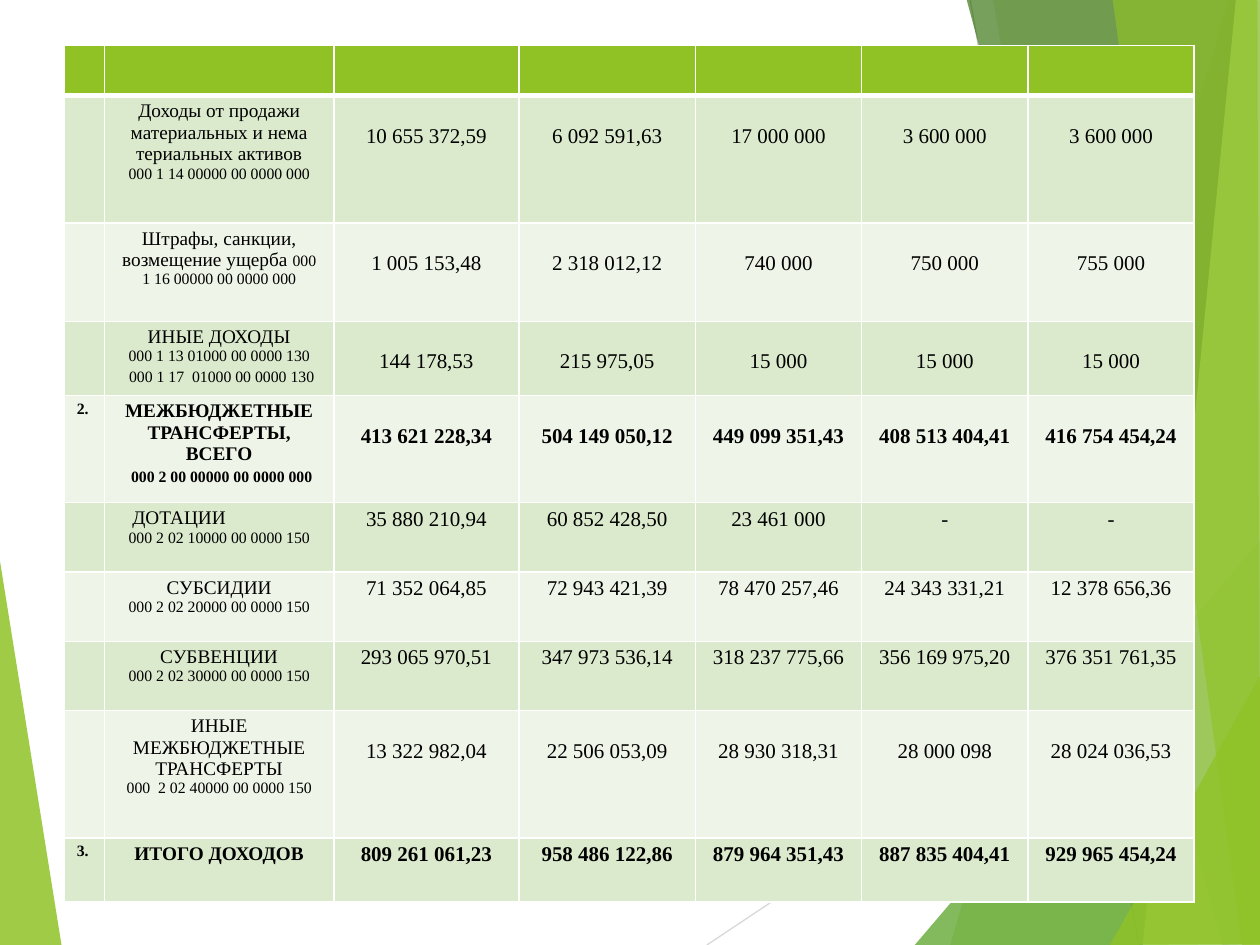
import dataclasses

import lxml.etree
import pptx
import pptx.dml.color
import pptx.enum.text
import pptx.oxml.ns
import pptx.util

Inches = pptx.util.Inches
Align = pptx.enum.text.PP_ALIGN
qn = pptx.oxml.ns.qn


@dataclasses.dataclass(frozen=True)
class Theme:
    font: str = "Times New Roman"
    ink: str = "000000"
    edge: str = "FFFFFF"
    head: str = "90C226"
    bands: tuple = ("DBE9CD", "EEF4E8")
    code: int = 9
    name: int = 11
    sum: int = 12
    thin: float = 1
    thick: float = 3
    pad: float = 0.04
    drop: float = 0.19


THEME = Theme()
CODE, NAME = THEME.code, THEME.name
LEFT, RIGHT = Align.LEFT, Align.CENTER

BACK = [
    ("90C226", 85, [(-0.01, 4.39), (0.49, 7.51), (-0.01, 7.5)]),
    ("D9D9D9", None, [(5.61, 7.5), (10.01, 4.57)]),
    ("BFBFBF", None, [(7.7, 0), (9.04, 7.5)]),
    ("90C226", 30, [(9.75, 0), (7.54, 7.5), (10.02, 7.51), (10.01, 0.01)]),
    ("90C226", 20, [(7.88, -0.01), (9.19, 7.5), (10.01, 7.5), (10.01, -0.01)]),
    ("54A021", 72, [(7.26, 7.5), (10, 4.29), (10.01, 7.5)]),
    ("3F7819", 70, [(7.67, -0.01), (9.7, 7.5), (10.01, 7.49), (10.01, -0.01)]),
    ("C0E474", 70, [(9.81, -0.01), (9.07, 7.5), (10.01, 7.5), (10, -0.01)]),
    ("90C226", 65, [(8.83, -0.01), (9.86, 7.5), (10, 7.5), (9.98, -0.01)]),
    ("90C226", 80, [(8.81, 7.5), (10.01, 5.35), (10.01, 7.49)]),
]

COLS = [0.32, 1.82, 1.47, 1.4, 1.32, 1.32, 1.32]
TOP = 0.4

ROWS = [
    (1.01, "", [[("Доходы от продажи материальных и нема териальных активов", NAME)],
                [("000 1 14 00000 00 0000 000", CODE)]],
     ["10 655 372,59", "6 092 591,63", "17 000 000", "3 600 000", "3 600 000"], True),
    (0.78, "", [[("Штрафы, санкции, возмещение ущерба ", NAME),
                 ("000 1 16 00000 00 0000 000", CODE)]],
     ["1 005 153,48", "2 318 012,12", "740 000", "750 000", "755 000"], True),
    (0.59, "", [[("ИНЫЕ ДОХОДЫ", NAME)],
                [("000 1 13 01000 00 0000 130", CODE)],
                [(" ", NAME), ("000 1 17  01000 00 0000 130", CODE)]],
     ["144 178,53", "215 975,05", "15 000", "15 000", "15 000"], True),
    (0.85, "2.", [[("МЕЖБЮДЖЕТНЫЕ ТРАНСФЕРТЫ, ВСЕГО", NAME)],
                  [(" ", NAME), ("000 2 00 00000 00 0000 000", CODE)]],
     ["413 621 228,34", "504 149 050,12", "449 099 351,43", "408 513 404,41",
      "416 754 454,24"], True),
    (0.55, "", [[("ДОТАЦИИ", NAME)], [("000 2 02 10000 00 0000 150", CODE)]],
     ["35 880 210,94", "60 852 428,50", "23 461 000", "-", "-"], False),
    (0.55, "", [[("СУБСИДИИ", NAME)], [("000 2 02 20000 00 0000 150", CODE)]],
     ["71 352 064,85", "72 943 421,39", "78 470 257,46", "24 343 331,21",
      "12 378 656,36"], False),
    (0.55, "", [[("СУБВЕНЦИИ", NAME)], [("000 2 02 30000 00 0000 150", CODE)]],
     ["293 065 970,51", "347 973 536,14", "318 237 775,66", "356 169 975,20",
      "376 351 761,35"], False),
    (1.01, "", [[("ИНЫЕ МЕЖБЮДЖЕТНЫЕ ТРАНСФЕРТЫ", NAME)],
                [("000  2 02 40000 00 0000 150", CODE)]],
     ["13 322 982,04", "22 506 053,09", "28 930 318,31", "28 000 098",
      "28 024 036,53"], True),
    (0.51, "3.", [[("ИТОГО ДОХОДОВ", NAME)]],
     ["809 261 061,23", "958 486 122,86", "879 964 351,43", "887 835 404,41",
      "929 965 454,24"], False),
]


def tint(hue):
    return pptx.dml.color.RGBColor.from_string(hue)


def apply(item, form):
    for key, value in form.items():
        setattr(item, key, value)


class Deck:
    """Draws styled elements on the current slide."""

    def __init__(self, theme):
        self.theme = theme
        self.show = pptx.Presentation()
        apply(self.show, {"slide_width": Inches(10), "slide_height": Inches(7.5)})
        self.slide = self.show.slides.add_slide(self.show.slide_layouts[6])

    def line(self, hue, ends):
        flat = [Inches(n) for point in ends for n in point]
        line = self.slide.shapes.add_connector(1, *flat)
        apply(line.line, {"width": pptx.util.Pt(0.75)})
        line.line.color.rgb = tint(hue)
        lxml.etree.SubElement(line._element.spPr, qn("a:effectLst"))

    def facet(self, hue, alpha, points):
        spots = [(Inches(x), Inches(y)) for x, y in points]
        pen = self.slide.shapes.build_freeform(*spots[0])
        pen.add_line_segments(spots[1:], close=True)
        shape = pen.convert_to_shape()
        shape.shadow.inherit = False
        shape.line.fill.background()
        shape.fill.solid()
        shape.fill.fore_color.rgb = tint(hue)
        mark = shape._element.spPr.find(".//" + qn("a:srgbClr"))
        lxml.etree.SubElement(mark, qn("a:alpha"), val=str(alpha * 1000))

    def grid(self, box, cols, rows):
        frame = self.slide.shapes.add_table(len(rows), len(cols), *map(Inches, box))
        grid = frame.table
        apply(grid, {"first_row": False, "horz_banding": False})
        for col, width in zip(grid.columns, cols):
            col.width = Inches(width)
        for row, height in zip(grid.rows, rows):
            row.height = Inches(height)
        return grid

    def cell(self, cell, hue, above, below):
        props = cell._tc.get_or_add_tcPr()
        wide = {"L": self.theme.thin, "R": self.theme.thin, "T": above, "B": below}
        for side, width in wide.items():
            edge = lxml.etree.SubElement(
                props, qn("a:ln" + side), w=str(pptx.util.Pt(width)))
            fill = lxml.etree.SubElement(edge, qn("a:solidFill"))
            lxml.etree.SubElement(fill, qn("a:srgbClr"), val=self.theme.edge)
        cell.fill.solid()
        cell.fill.fore_color.rgb = tint(hue)
        pad = Inches(self.theme.pad)
        apply(cell, {"margin_top": pad, "margin_bottom": pad})

    def text(self, cell, paras, bold, align=Align.CENTER):
        frame = cell.text_frame
        for num, runs in enumerate(paras):
            para = frame.add_paragraph() if num else frame.paragraphs[0]
            para.alignment = align
            for words, size in runs:
                run = para.add_run()
                run.text = words
                apply(run.font, {"name": self.theme.font, "bold": bold,
                                 "size": pptx.util.Pt(size)})
                run.font.color.rgb = tint(self.theme.ink)


def main():
    deck = Deck(THEME)
    for hue, alpha, points in BACK:
        if alpha is None:
            deck.line(hue, points)
        else:
            deck.facet(hue, alpha, points)

    grid = deck.grid((0.51, 0.36, 8.98, 6.8), COLS, [TOP] + [row[0] for row in ROWS])
    for cell in grid.rows[0].cells:
        deck.cell(cell, THEME.head, THEME.thin, THEME.thick)
    for num, (_, mark, label, sums, low) in enumerate(ROWS):
        cells = list(grid.rows[num + 1].cells)
        for cell in cells:
            deck.cell(cell, THEME.bands[num % 2],
                      THEME.thin if num else THEME.thick, THEME.thin)
        bold = bool(mark)
        if mark:
            deck.text(cells[0], [[(mark, CODE)]], bold, Align.LEFT)
        deck.text(cells[1], label, bold)
        for cell, words in zip(cells[2:], sums):
            deck.text(cell, [[(words, THEME.sum)]], bold)
            if low:
                cell.margin_top = Inches(THEME.pad + THEME.drop)

    grants = grid.cell(5, 1).text_frame.paragraphs[0]
    grants.alignment = Align.LEFT
    grants._p.get_or_add_pPr().set("marL", str(Inches(0.12)))
    deck.show.save("out.pptx")


if __name__ == "__main__":
    main()
